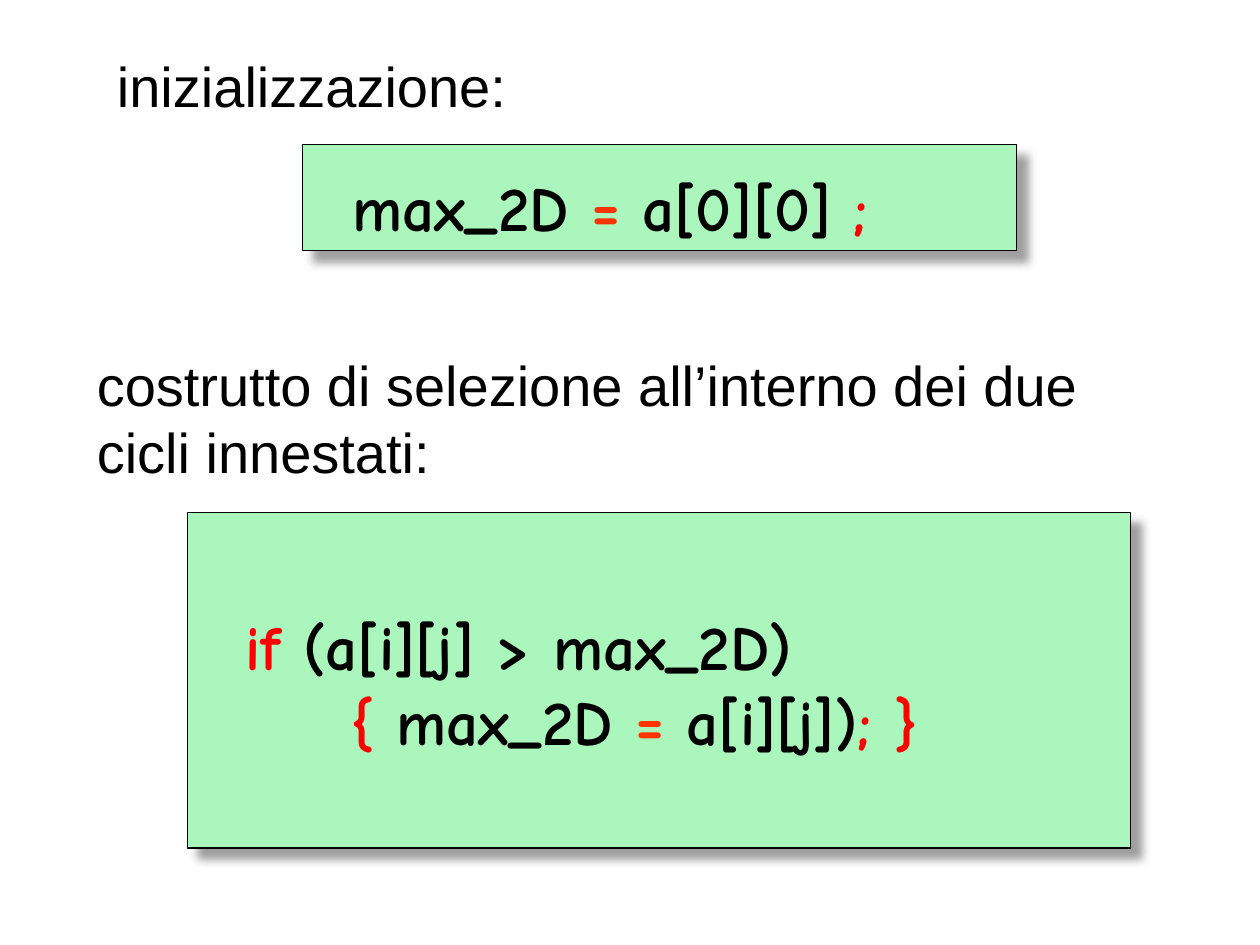
from dataclasses import dataclass

import pptx
import pptx.dml.color
import pptx.enum.shapes
import pptx.enum.text
import pptx.oxml
import pptx.oxml.ns
import pptx.util
from pptx.util import Inches


@dataclass(frozen=True)
class Theme:
    panel: str = "AAF6BC"
    ink: str = "000000"
    keyword: str = "FF0000"
    operator: str = "FF3300"
    shadow: str = "808080"
    label_font: str = "Arial"
    code_font: str = "Comic Neue"
    label_size: int = 32
    code_size: int = 36


THEME = Theme()


@dataclass(frozen=True)
class Box:
    left: float
    top: float
    width: float
    height: float

    def lengths(self) -> list[int]:
        return [Inches(v) for v in (self.left, self.top, self.width, self.height)]


@dataclass(frozen=True)
class Label:
    box: Box
    text: str


@dataclass(frozen=True)
class CodeLine:
    indent: float
    tokens: list[tuple[str, str]]  # text, colour


@dataclass(frozen=True)
class CodePanel:
    box: Box
    top_margin: float
    lines: list[CodeLine]


PANELS = [
    CodePanel(Box(2.4, 1.15, 5.67, 0.84), 0.19, [
        CodeLine(0.3, [("max_2D ", THEME.ink), ("=", THEME.operator),
                       (" a[0][0] ", THEME.ink), (";", THEME.keyword)]),
    ]),
    CodePanel(Box(1.49, 4.07, 7.48, 2.66), 0.75, [
        CodeLine(0.36, [("if ", THEME.keyword), ("(a[i][j] > max_2D)", THEME.ink)]),
        CodeLine(1.19, [("{ ", THEME.keyword), ("max_2D ", THEME.ink),
                        ("= ", THEME.operator), ("a[i][j])", THEME.ink),
                        ("; }", THEME.keyword)]),
    ]),
]
LABELS = [
    Label(Box(0.83, 0.36, 3.54, 0.63), "inizializzazione:"),
    Label(Box(0.67, 2.73, 8.43, 1.17),
          "costrutto di selezione all’interno dei due cicli innestati:"),
]


def rgb(value: str) -> pptx.dml.color.RGBColor:
    return pptx.dml.color.RGBColor.from_string(value)


def add_shadow(sp) -> None:
    """Give the shape a soft grey shadow to the lower right."""
    sp.shadow.inherit = False
    effects = sp._element.spPr.find(pptx.oxml.ns.qn("a:effectLst"))
    effects.append(pptx.oxml.parse_xml(
        f'<a:outerShdw {pptx.oxml.ns.nsdecls("a")} blurRad="{pptx.util.Pt(5)}" '
        f'dist="{pptx.util.Pt(8.5)}" dir="2700000" algn="tl" rotWithShape="0">'
        f'<a:srgbClr val="{THEME.shadow}"><a:alpha val="75000"/></a:srgbClr>'
        '</a:outerShdw>'))


def add_code_panel(s, panel: CodePanel) -> None:
    sp = s.shapes.add_shape(
        pptx.enum.shapes.MSO_SHAPE.RECTANGLE, *panel.box.lengths())
    sp.fill.solid()
    sp.fill.fore_color.rgb = rgb(THEME.panel)
    sp.line.color.rgb = rgb(THEME.ink)
    sp.line.width = pptx.util.Pt(0.75)
    add_shadow(sp)
    tf = sp.text_frame
    tf.word_wrap = True
    tf.vertical_anchor = pptx.enum.text.MSO_ANCHOR.TOP
    tf.margin_top = Inches(panel.top_margin)
    for i, line in enumerate(panel.lines):
        p = tf.add_paragraph() if i else tf.paragraphs[0]
        p.alignment = pptx.enum.text.PP_ALIGN.LEFT
        p._p.get_or_add_pPr().set("marL", str(Inches(line.indent)))
        p.font.name = THEME.code_font
        p.font.size = pptx.util.Pt(THEME.code_size)
        p.font.bold = True
        for text, color in line.tokens:
            r = p.add_run()
            r.text = text
            r.font.color.rgb = rgb(color)


def add_label(s, label: Label) -> None:
    tf = s.shapes.add_textbox(*label.box.lengths()).text_frame
    tf.word_wrap = True
    p = tf.paragraphs[0]
    p.text = label.text
    p.font.name = THEME.label_font
    p.font.size = pptx.util.Pt(THEME.label_size)
    p.font.color.rgb = rgb(THEME.ink)


def main() -> None:
    prs = pptx.Presentation()
    prs.slide_width, prs.slide_height = Inches(10), Inches(7.5)
    s = prs.slides.add_slide(prs.slide_layouts[6])
    for panel in PANELS:
        add_code_panel(s, panel)
    for label in LABELS:
        add_label(s, label)
    prs.save("out.pptx")


if __name__ == "__main__":
    main()
